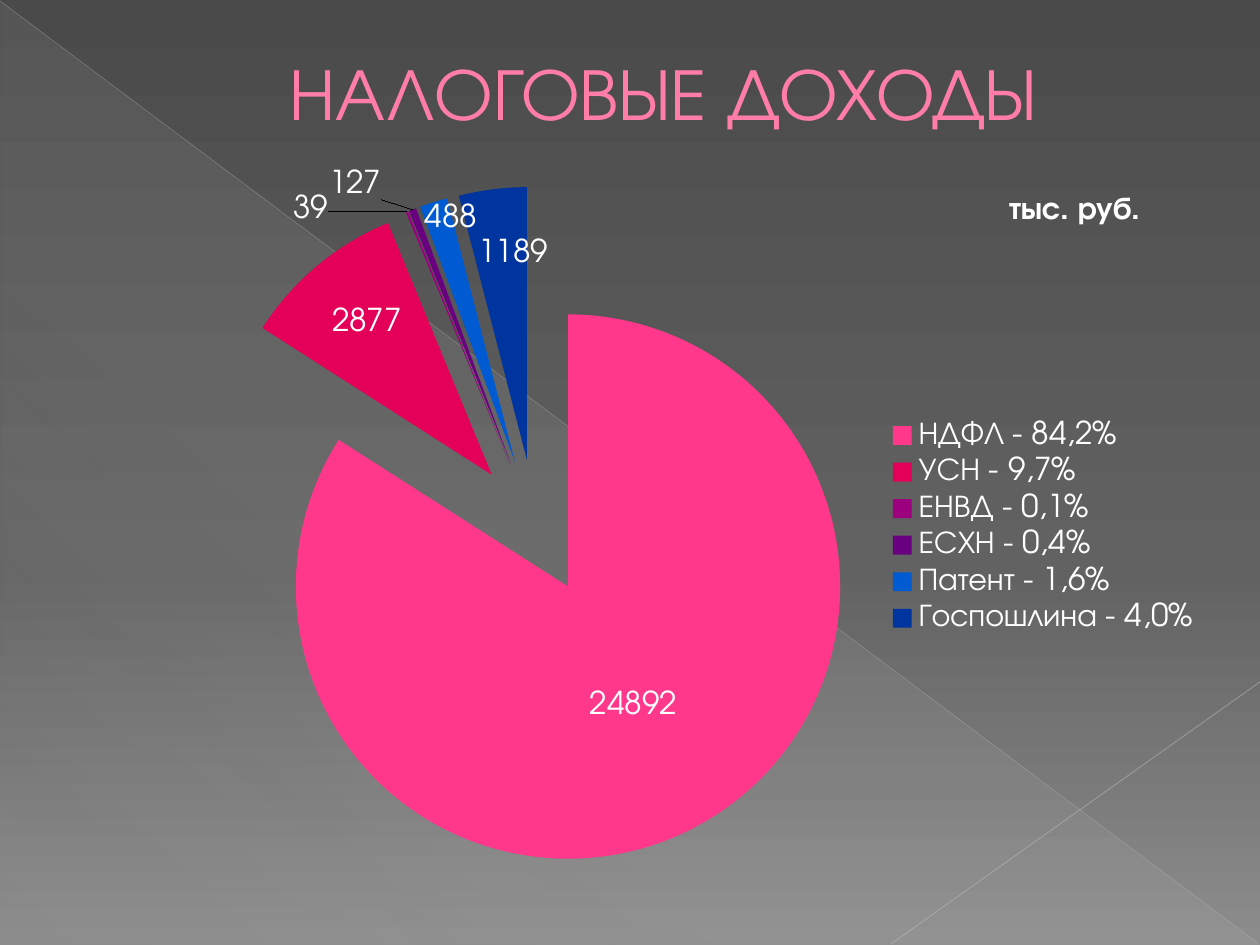
from pptx import Presentation
from pptx.chart.data import CategoryChartData
from pptx.dml.color import RGBColor
from pptx.enum.chart import XL_CHART_TYPE, XL_LABEL_POSITION, XL_LEGEND_POSITION
from pptx.enum.shapes import MSO_CONNECTOR, MSO_SHAPE
from pptx.enum.text import MSO_ANCHOR, PP_ALIGN
from pptx.oxml import parse_xml
from pptx.oxml.ns import nsdecls
from pptx.util import Emu, Pt

PIE = XL_CHART_TYPE.PIE_EXPLODED
MID = XL_LABEL_POSITION.CENTER
RIGHT = XL_LEGEND_POSITION.RIGHT
PX = 914400 // 126
FONT = "TeX Gyre Adventor"
WHITE = "FFFFFF"

TITLE = "НАЛОГОВЫЕ ДОХОДЫ"
UNIT = "тыс. руб."
# category, value, colour, label shift in px from the middle of the slice
SLICES = [
    ("НДФЛ - 84,2%", 24892, "FF388C", None),
    ("УСН - 9,7%", 2877, "E40059", (-37, -48)),
    ("ЕНВД - 0,1%", 39, "9C007F", (-147, -128)),
    ("ЕСХН - 0,4%", 127, "68007F", (-107, -152)),
    ("Патент - 1,6%", 488, "005BD3", (-23, -113)),
    ("Госпошлина - 4,0%", 1189, "00349E", (4, -70)),
]
# stops: position, colour, opacity in percent
BACK = [(0, "4A4A4A", 100), (60, "626262", 100), (100, "8C8C8C", 100)]
SHEEN = [(0, "D2D2D2", 10), (70, "D2D2D2", 8), (100, "D2D2D2", 1)]
# ends in px, colour, width in pt, opacity in percent
LINES = [
    ((0, 1, 1259, 944), "BFBFBF", 0.39, 35),
    ((1260, 682, 891, 944), "C6C6C6", 0.47, 45),
]
CHART = (44, 165, 1170, 724)


def px(*nums):
    return [Emu(n * PX) for n in nums]


def rgb(code):
    return RGBColor.from_string(code)


def style(font, size, color=WHITE, bold=False):
    font.name, font.size, font.bold = FONT, Pt(size), bold
    font.color.rgb = rgb(color)


def grade(solid, stops, angle):
    """Put a gradient in the place of a solid fill."""
    marks = "".join(
        f'<a:gs pos="{pos * 1000}"><a:srgbClr val="{code}">'
        f'<a:alpha val="{part * 1000}"/></a:srgbClr></a:gs>'
        for pos, code, part in stops)
    solid.getparent().replace(solid, parse_xml(
        f'<a:gradFill {nsdecls("a")} rotWithShape="1"><a:gsLst>{marks}</a:gsLst>'
        f'<a:lin ang="{angle * 60000}" scaled="0"/></a:gradFill>'))


def layout(x, y, size=None, inner=False):
    """Manual chart layout, in fractions of the chart."""
    edge = '<c:xMode val="edge"/><c:yMode val="edge"/>' if size else ""
    area = '<c:layoutTarget val="inner"/>' if inner else ""
    tail = ""
    if inner:
        tail = f'<c:w val="{size[0]}"/><c:h val="{size[1]}"/>'
    return parse_xml(
        f'<c:layout {nsdecls("c")}><c:manualLayout>{area}{edge}'
        f'<c:x val="{x}"/><c:y val="{y}"/>{tail}</c:manualLayout></c:layout>')


def swap(home, spot, new):
    """Set the layout of a chart part, at the given child index."""
    for old in home.xpath("./c:layout"):
        home.remove(old)
    home.insert(spot, new)


def backdrop(slide):
    slide.background.fill.solid()
    grade(slide.element.xpath(".//p:bg//a:solidFill")[0], BACK, 90)
    sheen = slide.shapes.add_shape(MSO_SHAPE.RIGHT_TRIANGLE, *px(1, 2, 1258, 942))
    sheen.shadow.inherit = False
    sheen.line.fill.background()
    sheen.fill.solid()
    grade(sheen.element.xpath("./p:spPr/a:solidFill")[0], SHEEN, 133)
    for ends, code, width, part in LINES:
        line = slide.shapes.add_connector(MSO_CONNECTOR.STRAIGHT, *px(*ends))
        line.line.color.rgb = rgb(code)
        line.line.width = Pt(width)
        line.element.xpath(".//a:ln//a:srgbClr")[0].append(
            parse_xml(f'<a:alpha {nsdecls("a")} val="{part * 1000}"/>'))
        line.element.spPr.append(parse_xml(f'<a:effectLst {nsdecls("a")}/>'))


def heading(slide):
    box = slide.shapes.add_textbox(*px(63, 37, 1134, 108))
    frame = box.text_frame
    frame.word_wrap = True
    frame.vertical_anchor = MSO_ANCHOR.MIDDLE
    frame.text = TITLE
    para = frame.paragraphs[0]
    para.alignment = PP_ALIGN.CENTER
    para._p.get_or_add_pPr().set("marL", str(67 * PX))
    style(para.runs[0].font, 42, "FF7DA7")


def pie(slide):
    data = CategoryChartData()
    data.categories = [row[0] for row in SLICES]
    data.add_series("Series 1", [row[1] for row in SLICES])
    chart = slide.shapes.add_chart(PIE, *px(*CHART), data).chart
    style(chart.font, 18)

    # Unit in the top right corner
    chart.has_title = True
    chart.chart_title.text_frame.text = UNIT
    style(chart.chart_title.text_frame.paragraphs[0].runs[0].font, 18, bold=True)
    chart.chart_title.include_in_layout = False
    swap(chart.chart_title._element, 1, layout(0.82, 0.03, size=(0, 0)))

    chart.has_legend = True
    chart.legend.position = RIGHT
    chart.legend.include_in_layout = False
    style(chart.legend.font, 18)

    # Slices and their labels
    plot = chart.plots[0]
    plot.vary_by_categories = True
    series = plot.series[0]
    for old in series._element.xpath("./c:explosion"):
        old.set("val", "25")
    labels = series.data_labels
    labels.show_value = True
    labels.position = MID
    style(labels.font, 18)
    for i, (_, _, code, shift) in enumerate(SLICES):
        point = series.points[i]
        point.format.fill.solid()
        point.format.fill.fore_color.rgb = rgb(code)
        point.format.line.fill.background()
        if shift:
            label = point.data_label
            label.position = MID
            style(label.font, 18)
            mark = series._element.xpath(f"./c:dLbls/c:dLbl[c:idx/@val='{i}']")[0]
            swap(mark, 1, layout(round(shift[0] / CHART[2], 3),
                                 round(shift[1] / CHART[3], 3)))
    for flag in series._element.xpath("./c:dLbls/c:showLeaderLines"):
        flag.set("val", "1")
    area = plot._element.getparent()
    swap(area, 0, layout(0.01, 0.03, size=(0.82, 0.94), inner=True))


def main():
    deck = Presentation()
    deck.slide_width, deck.slide_height = px(1260, 945)
    slide = deck.slides.add_slide(deck.slide_layouts[6])
    backdrop(slide)
    heading(slide)
    pie(slide)
    deck.save("out.pptx")


if __name__ == "__main__":
    main()
